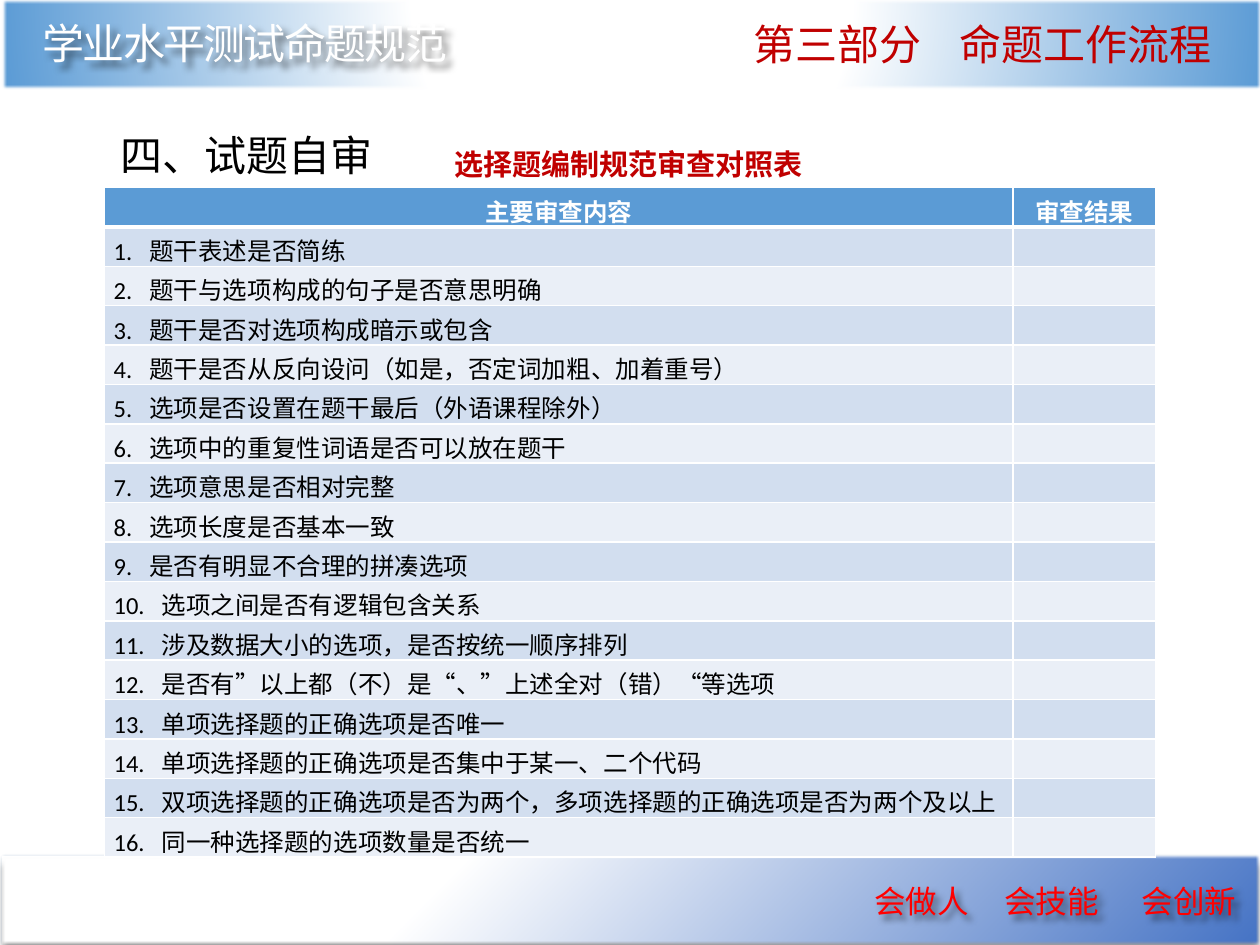
from lxml.etree import fromstring
from pptx import Presentation
from pptx.dml.color import RGBColor
from pptx.enum.shapes import MSO_SHAPE
from pptx.enum.text import MSO_ANCHOR, PP_ALIGN
from pptx.util import Cm, Pt

NAMESPACE = "http://schemas.openxmlformats.org/drawingml/2006/main"
CHINESE_FONT = "Noto Sans CJK SC"


def append_xml(parent, tag, attributes="", content=""):
    parent.append(fromstring(
        f'<a:{tag} xmlns:a="{NAMESPACE}" {attributes}>{content}</a:{tag}>'))


def write(frame, text, size=24, font=CHINESE_FONT, color="000000", bold=False,
          align=PP_ALIGN.LEFT, line_spacing=None, letter_spacing=None, tabs=()):
    paragraph = frame.paragraphs[0]
    paragraph.alignment = align
    if line_spacing:
        paragraph.line_spacing = line_spacing
    if tabs:
        stops = "".join(f'<a:tab pos="{Cm(stop)}" algn="l"/>' for stop in tabs)
        append_xml(paragraph._p.get_or_add_pPr(), "tabLst", content=stops)
    if not text:
        append_xml(paragraph._p, "endParaRPr", f'sz="{size * 100}"')
        return
    run = paragraph.add_run()
    run.text = text
    run.font.size = Pt(size)
    run.font.bold = bold
    run.font.name = font
    run.font.color.rgb = RGBColor.from_string(color)
    east_asian = CHINESE_FONT if font == "Calibri" else font
    properties = run.font._element
    append_xml(properties, "ea", f'typeface="{east_asian}"')
    if letter_spacing:
        properties.set("spc", str(letter_spacing * 100))


presentation = Presentation()
presentation.slide_width, presentation.slide_height = Cm(25.4), Cm(19.05)
slide = presentation.slides.add_slide(presentation.slide_layouts[6])

# Footer and header bands: top, end colour, gradient focus, outline, shadow
footer_shadow = ('<a:outerShdw blurRad="50800" dist="50800" dir="5400000">'
                 '<a:srgbClr val="000000"><a:alpha val="38000"/></a:srgbClr></a:outerShdw>')
bands = [
    (0, 17.22, "4472C4", 'r="100000" b="100000"', "43739E", footer_shadow),
    (0.03, -0.03, "5B9BD5", 'l="50000" t="-80000" r="50000" b="180000"', None, ""),
]
for left, top, end_color, focus, outline, shadow in bands:
    shape = slide.shapes.add_shape(
        MSO_SHAPE.RECTANGLE, Cm(left), Cm(top), Cm(25.4), Cm(1.83))
    stops = "".join(
        f'<a:gs pos="{position * 1000}"><a:srgbClr val="{color}"/></a:gs>'
        for position, color in ((0, "FFFFFF"), (35, "FFFFFF"), (100, end_color)))
    append_xml(shape._element.spPr, "gradFill", 'rotWithShape="1"',
               f'<a:gsLst>{stops}</a:gsLst>'
               f'<a:path path="circle"><a:fillToRect {focus}/></a:path>')
    if outline:
        shape.line.color.rgb = RGBColor.from_string(outline)
        shape.line.width = Pt(1)
    else:
        shape.line.fill.background()
    append_xml(shape._element.spPr, "effectLst",
               content=shadow + '<a:softEdge rad="25400"/>')

# Headings: position and size, text, has a shadow, format
headings = [
    ((17.37, 17.65, 8.76, 1.02), "会做人\t会技能\t会创新", True,
     dict(size=18, font="Noto Sans CJK JP", color="FF0000", tabs=(2.63, 5.4))),
    ((0.61, 0.23, 9.14, 1.27), "学业水平测试命题规范", True,
     dict(color="FFFFFF", letter_spacing=-1)),
    ((2.18, 2.49, 12.73, 1.27), "四、试题自审", False, {}),
    ((14.94, 0.25, 10.19, 1.27), "第三部分\t命题工作流程", False,
     dict(color="C00000", tabs=(4.15,))),
    ((8.92, 2.9, 8.1, 1.09), "选择题编制规范审查对照表", False,
     dict(size=16.6, font="Calibri", color="C00000", bold=True, line_spacing=0.9)),
]
for box, text, has_shadow, text_format in headings:
    shape = slide.shapes.add_textbox(*map(Cm, box))
    shape.text_frame.word_wrap = True
    write(shape.text_frame, text, **text_format)
    if has_shadow:
        append_xml(shape._element.spPr, "effectLst", content=(
            '<a:outerShdw blurRad="50800" dist="50800" dir="2700000">'
            '<a:srgbClr val="000000"><a:alpha val="50000"/></a:srgbClr></a:outerShdw>'))

# Review checklist table
checks = [
    "题干表述是否简练",
    "题干与选项构成的句子是否意思明确",
    "题干是否对选项构成暗示或包含",
    "题干是否从反向设问（如是，否定词加粗、加着重号）",
    "选项是否设置在题干最后（外语课程除外）",
    "选项中的重复性词语是否可以放在题干",
    "选项意思是否相对完整",
    "选项长度是否基本一致",
    "是否有明显不合理的拼凑选项",
    "选项之间是否有逻辑包含关系",
    "涉及数据大小的选项，是否按统一顺序排列",
    "是否有”以上都（不）是“、”上述全对（错）“等选项",
    "单项选择题的正确选项是否唯一",
    "单项选择题的正确选项是否集中于某一、二个代码",
    "双项选择题的正确选项是否为两个，多项选择题的正确选项是否为两个及以上",
    "同一种选择题的选项数量是否统一",
]
rows = [("主要审查内容", "审查结果")]
rows += [(f"{number}.\t{check}", "") for number, check in enumerate(checks, 1)]

table_height = Cm(13.36)
table = slide.shapes.add_table(
    len(rows), 2, Cm(2.11), Cm(3.78), Cm(21.18), table_height).table
table.horz_banding = False
table.columns[0].width, table.columns[1].width = Cm(18.31), Cm(2.87)

for row_index, row in enumerate(rows):
    table.rows[row_index].height = table_height // len(rows)
    is_header = row_index == 0
    if is_header:
        fill_color = "5B9BD5"
        text_format = dict(color="FFFFFF", bold=True, align=PP_ALIGN.CENTER)
    else:
        fill_color = "D2DEEF" if row_index % 2 else "EAEFF7"
        text_format = dict(tabs=(0.72 if row_index < 10 else 0.97,))
    for column_index, text in enumerate(row):
        cell = table.cell(row_index, column_index)
        cell.vertical_anchor = MSO_ANCHOR.MIDDLE
        cell.margin_left = cell.margin_right = Cm(0.18)
        cell.margin_top = cell.margin_bottom = Cm(0.1)
        write(cell.text_frame, text, size=14, font="Calibri", **text_format)
        # White borders, thicker under the header row
        widths = dict(L=1, R=1, T=3 if row_index == 1 else 1, B=3 if is_header else 1)
        for side, width in widths.items():
            append_xml(cell._tc.get_or_add_tcPr(), f"ln{side}", f'w="{Pt(width)}"',
                       '<a:solidFill><a:srgbClr val="FFFFFF"/></a:solidFill>')
        cell.fill.solid()
        cell.fill.fore_color.rgb = RGBColor.from_string(fill_color)

presentation.save("out.pptx")
